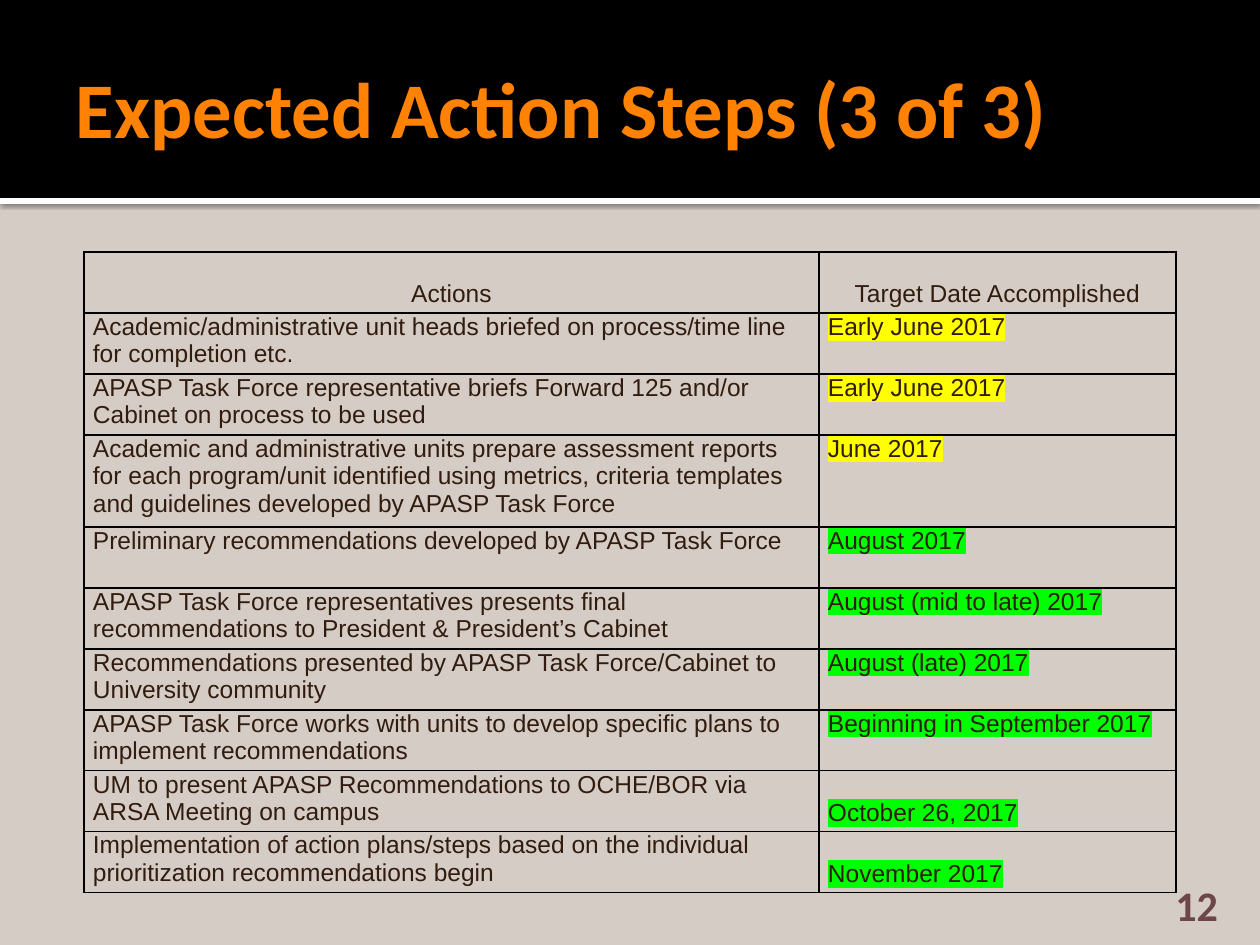
from lxml.etree import SubElement
from pptx import Presentation
from pptx.dml.color import RGBColor
from pptx.enum.shapes import MSO_SHAPE as Shape
from pptx.enum.text import MSO_ANCHOR as Anchor, PP_ALIGN as Align
from pptx.oxml import parse_xml
from pptx.oxml.ns import nsdecls, qn
from pptx.util import Pt

EMU_PER_PX = 914400 / 126
ROW_HEIGHT, TALL_ROW_HEIGHT = 61, 92
COLUMN_WIDTHS = (735, 357)
YELLOW, GREEN = "FFFF00", "00FF00"

# action, target date, highlight, vertical anchor of the date
STEPS = [
    ("Academic/administrative unit heads briefed on process/time line for completion etc.",
     "Early June 2017", YELLOW, Anchor.TOP),
    ("APASP Task Force representative briefs Forward 125 and/or Cabinet on process to be used",
     "Early June 2017", YELLOW, Anchor.TOP),
    ("Academic and administrative units prepare assessment reports for each program/unit "
     "identified using metrics, criteria templates and guidelines developed by APASP Task Force",
     "June 2017", YELLOW, Anchor.TOP),
    ("Preliminary recommendations developed by APASP Task Force",
     "August 2017", GREEN, Anchor.TOP),
    ("APASP Task Force representatives presents final recommendations to President "
     "& President’s Cabinet",
     "August (mid to late) 2017", GREEN, Anchor.TOP),
    ("Recommendations presented by APASP Task Force/Cabinet to University community",
     "August (late) 2017", GREEN, Anchor.TOP),
    ("APASP Task Force works with units to develop specific plans to implement recommendations",
     "Beginning in September 2017", GREEN, Anchor.TOP),
    ("UM to present APASP Recommendations to OCHE/BOR via ARSA Meeting on campus",
     "October 26, 2017", GREEN, Anchor.BOTTOM),
    ("Implementation of action plans/steps based on the individual prioritization "
     "recommendations begin",
     "November 2017", GREEN, Anchor.BOTTOM),
]
TALL_ROW = 3


def px(length):
    return round(length * EMU_PER_PX)


def color(hex_string):
    return RGBColor.from_string(hex_string)


def write(holder, text, *, size=14, font="Arial", hex_color="311C0F", bold=False,
          align=Align.LEFT, anchor=Anchor.TOP, margins=(0, 0, 0, 0), highlight=None):
    """Format text in a text frame or table cell; margins are left, top, right, bottom."""
    holder.margin_left, holder.margin_top, holder.margin_right, holder.margin_bottom = map(
        px, margins)
    holder.vertical_anchor = anchor
    frame = getattr(holder, "text_frame", holder)
    frame.word_wrap = True
    paragraph = frame.paragraphs[0]
    paragraph.alignment = align
    run = paragraph.add_run()
    run.text = text
    run.font.size, run.font.name, run.font.bold = Pt(size), font, bold
    run.font.color.rgb = color(hex_color)
    if highlight:
        fill = run.font._element.find(qn("a:solidFill"))
        fill.addnext(parse_xml(f'<a:highlight {nsdecls("a")}>'
                               f'<a:srgbClr val="{highlight}"/></a:highlight>'))


def add_text(slide, box, text, **text_format):
    frame = slide.shapes.add_textbox(*map(px, box)).text_frame
    write(frame, text, **text_format)


def add_bar(slide, box, hex_color):
    bar = slide.shapes.add_shape(Shape.RECTANGLE, *map(px, box))
    bar.shadow.inherit = False
    bar.fill.solid()
    bar.fill.fore_color.rgb = color(hex_color)
    bar.line.fill.background()
    return bar


def add_shadow(shape):
    effects = shape._element.spPr.find(qn("a:effectLst"))
    shadow = SubElement(effects, qn("a:outerShdw"), blurRad=str(Pt(2.5)), dist=str(Pt(0.8)),
                        dir="5400000", algn="tl", rotWithShape="0")
    black = SubElement(shadow, qn("a:srgbClr"), val="000000")
    SubElement(black, qn("a:alpha"), val="60000")


def style_cell(cell):
    """Clear the fill and draw a thin black line on each side."""
    cell.fill.background()
    properties = cell._tc.get_or_add_tcPr()
    for index, side in enumerate("LRTB"):
        properties.insert(index, parse_xml(
            f'<a:ln{side} {nsdecls("a")} w="{Pt(1)}"><a:solidFill>'
            f'<a:srgbClr val="000000"/></a:solidFill></a:ln{side}>'))


def add_header(slide, left, top, width, height):
    rule = add_bar(slide, (left, top + height, width, 6), "FFFFFF")
    add_shadow(rule)
    add_bar(slide, (left, top, width, height), "000000")
    add_text(slide, (left + 63, top + 21, width - 126, 173), "Expected Action Steps (3 of 3)",
             size=45, font="Calibri", hex_color="FF8205", bold=True,
             anchor=Anchor.MIDDLE, margins=(13, 6, 6, 6))


def add_steps_table(slide, left, top):
    heights = [ROW_HEIGHT] * (len(STEPS) + 1)
    heights[TALL_ROW] = TALL_ROW_HEIGHT
    table = slide.shapes.add_table(
        len(heights), len(COLUMN_WIDTHS),
        *map(px, (left, top, sum(COLUMN_WIDTHS), sum(heights)))).table
    table.first_row = table.horz_banding = False
    for column, width in zip(table.columns, COLUMN_WIDTHS):
        column.width = px(width)
    for row, height in zip(table.rows, heights):
        row.height = px(height)
    for cell in table.iter_cells():
        style_cell(cell)

    top_margins, bottom_margins = (9, 0, 9, 0), (9, 0, 9, 5)
    for column, heading in enumerate(("Actions", "Target Date Accomplished")):
        write(table.cell(0, column), heading, align=Align.CENTER,
              anchor=Anchor.BOTTOM, margins=bottom_margins)
    for row, (action, date, highlight, anchor) in enumerate(STEPS, start=1):
        write(table.cell(row, 0), action, margins=top_margins)
        write(table.cell(row, 1), date, highlight=highlight, anchor=anchor,
              margins=bottom_margins if anchor == Anchor.BOTTOM else top_margins)


def main():
    presentation = Presentation()
    presentation.slide_width, presentation.slide_height = px(1260), px(945)
    slide = presentation.slides.add_slide(presentation.slide_layouts[6])
    slide.background.fill.solid()
    slide.background.fill.fore_color.rgb = color("D5CDC5")
    add_header(slide, 0, 0, 1260, 198)
    add_steps_table(slide, 84, 252)
    add_text(slide, (1130, 892, 101, 38), "12", size=24, font="Calibri", hex_color="6E4549",
             bold=True, align=Align.RIGHT, anchor=Anchor.BOTTOM, margins=(13, 6, 13, 0))
    presentation.save("out.pptx")


if __name__ == "__main__":
    main()
